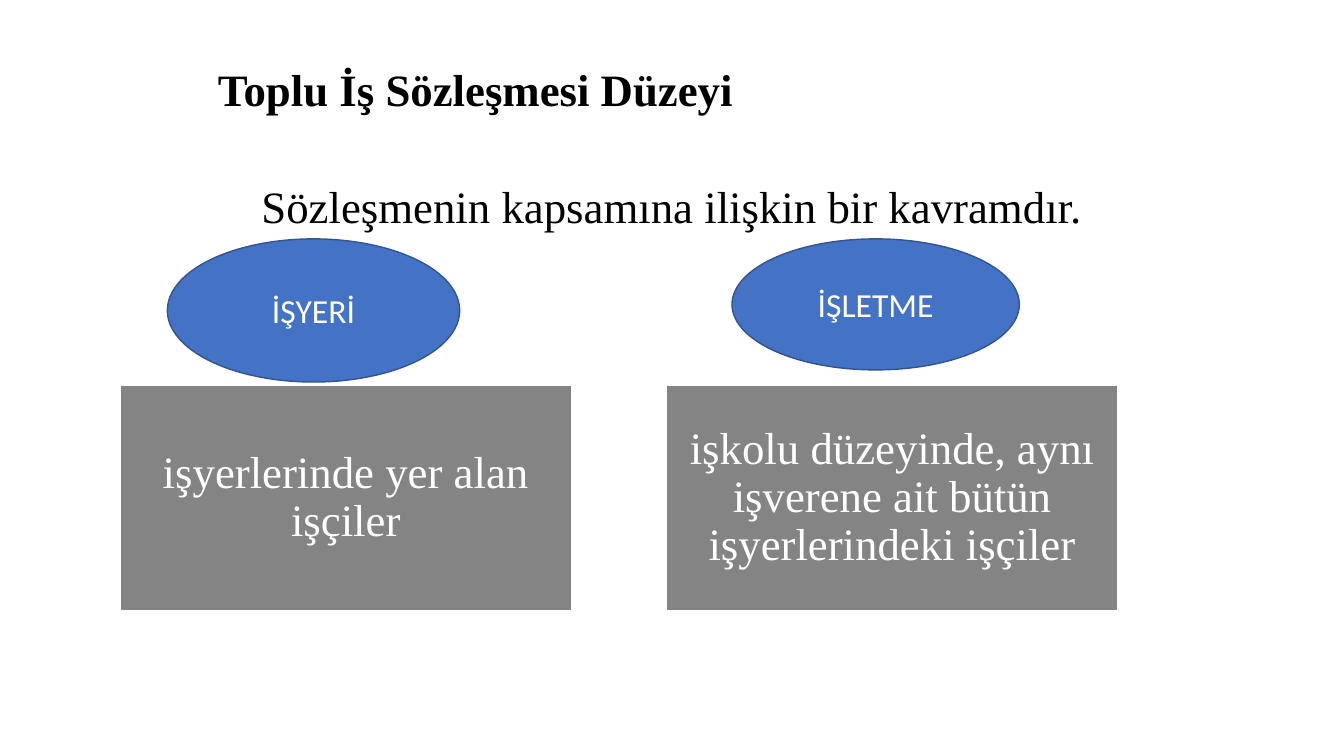
import pptx
import pptx.util
import pptx.dml.color
import pptx.enum.shapes
import pptx.enum.text

Inches = pptx.util.Inches
Pt = pptx.util.Pt
RGBColor = pptx.dml.color.RGBColor
SHAPE = pptx.enum.shapes.MSO_SHAPE
ALIGN = pptx.enum.text.PP_ALIGN
ANCHOR = pptx.enum.text.MSO_ANCHOR

BLACK = RGBColor(0x00, 0x00, 0x00)
WHITE = RGBColor(0xFF, 0xFF, 0xFF)
GREY = RGBColor(0x84, 0x84, 0x84)
BLUE = RGBColor(0x44, 0x72, 0xC4)
DARK_BLUE = RGBColor(0x32, 0x54, 0x91)
SERIF = "Times New Roman"
SANS = "Calibri"

PANEL_TOP = 3.82
PANEL_WIDTH = 4.48
PANEL_HEIGHT = 2.24
ELLIPSE_TOP = 2.37

# panel left, panel text, ellipse left, width, height, ellipse text
LEVELS = [
    (1.19, "işyerlerinde yer alan işçiler", 1.66, 2.9, 1.42, "İŞYERİ"),
    (6.61, "işkolu düzeyinde, aynı işverene ait bütün işyerlerindeki işçiler",
     7.26, 2.85, 1.3, "İŞLETME"),
]


def write_text(shape, text, font, size, color, align, spacing=1.0, bold=False):
    frame = shape.text_frame
    frame.word_wrap = True
    frame.vertical_anchor = ANCHOR.MIDDLE
    frame.text = text
    para = frame.paragraphs[0]
    para.alignment = align
    para.line_spacing = spacing
    span = para.runs[0]
    span.font.name = font
    span.font.size = Pt(size)
    span.font.bold = bold
    span.font.color.rgb = color


def add_filled_shape(slide, kind, box, fill, line):
    shape = slide.shapes.add_shape(kind, *map(Inches, box))
    shape.shadow.inherit = False
    shape.fill.solid()
    shape.fill.fore_color.rgb = fill
    shape.line.color.rgb = line
    shape.line.width = Pt(1)
    return shape


def place_title(slide, box, text):
    title = slide.shapes.title
    title.left, title.top, title.width, title.height = map(Inches, box)
    write_text(title, text, SERIF, 32, BLACK, ALIGN.LEFT, 0.9, bold=True)


def add_statement(slide, box, text):
    statement = slide.shapes.add_textbox(*map(Inches, box))
    write_text(statement, text, SERIF, 32, BLACK, ALIGN.CENTER, 0.9)
    statement.text_frame.vertical_anchor = ANCHOR.TOP


def add_panel(slide, box, text):
    panel = add_filled_shape(slide, SHAPE.RECTANGLE, box, GREY, WHITE)
    write_text(panel, text, SERIF, 32, WHITE, ALIGN.CENTER, 0.9)
    frame = panel.text_frame
    frame.margin_left = frame.margin_right = Inches(0.02)
    frame.margin_top = frame.margin_bottom = Inches(0.02)


def add_level_ellipse(slide, box, text):
    ellipse = add_filled_shape(slide, SHAPE.OVAL, box, BLUE, DARK_BLUE)
    write_text(ellipse, text, SANS, 24, WHITE, ALIGN.CENTER)


def main():
    deck = pptx.Presentation()
    deck.slide_width = Inches(13.33)
    deck.slide_height = Inches(7.5)
    slide = deck.slides.add_slide(deck.slide_layouts.get_by_name("Title Only"))
    place_title(slide, (2.06, 0.24, 10.56, 1.35), "Toplu İş Sözleşmesi Düzeyi")
    add_statement(slide, (0, 1.78, 13.33, 0.59),
                  "Sözleşmenin kapsamına ilişkin bir kavramdır.")
    for panel_left, detail, left, width, height, name in LEVELS:
        add_panel(slide, (panel_left, PANEL_TOP, PANEL_WIDTH, PANEL_HEIGHT), detail)
        add_level_ellipse(slide, (left, ELLIPSE_TOP, width, height), name)
    deck.save("out.pptx")


if __name__ == "__main__":
    main()
